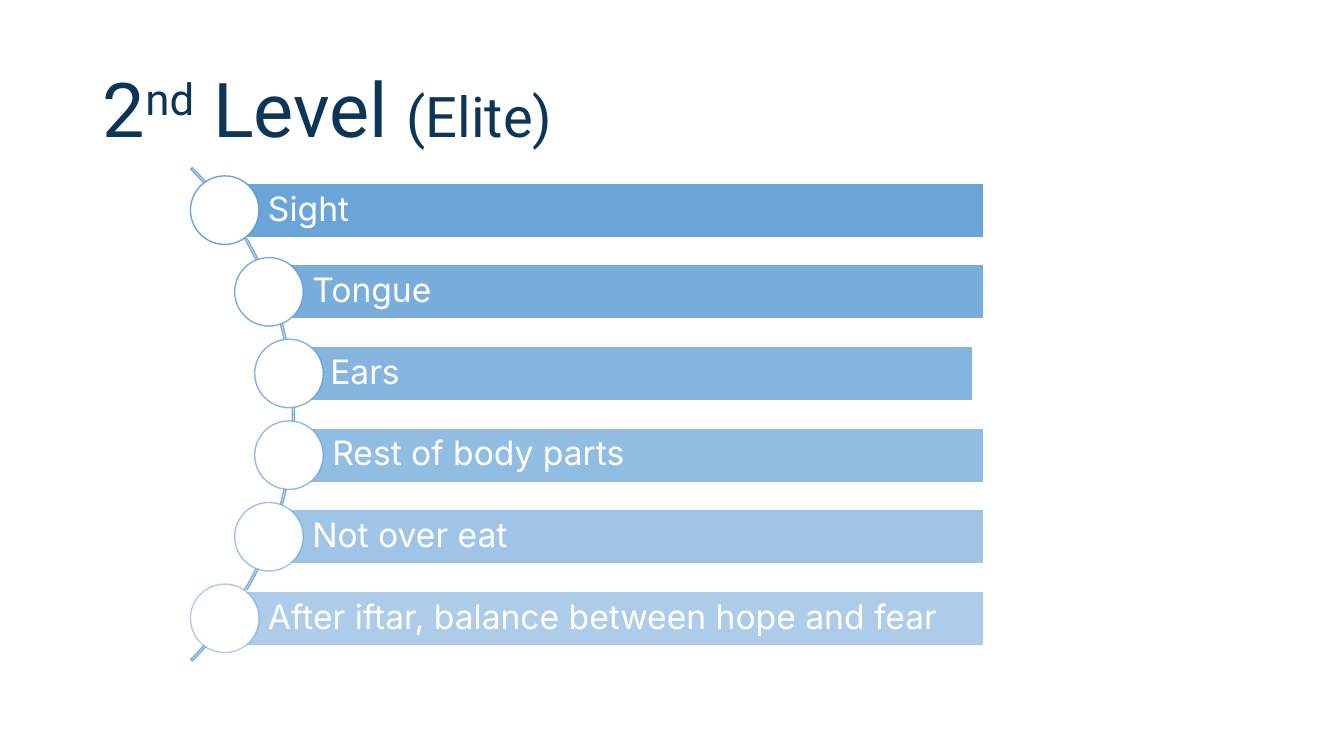
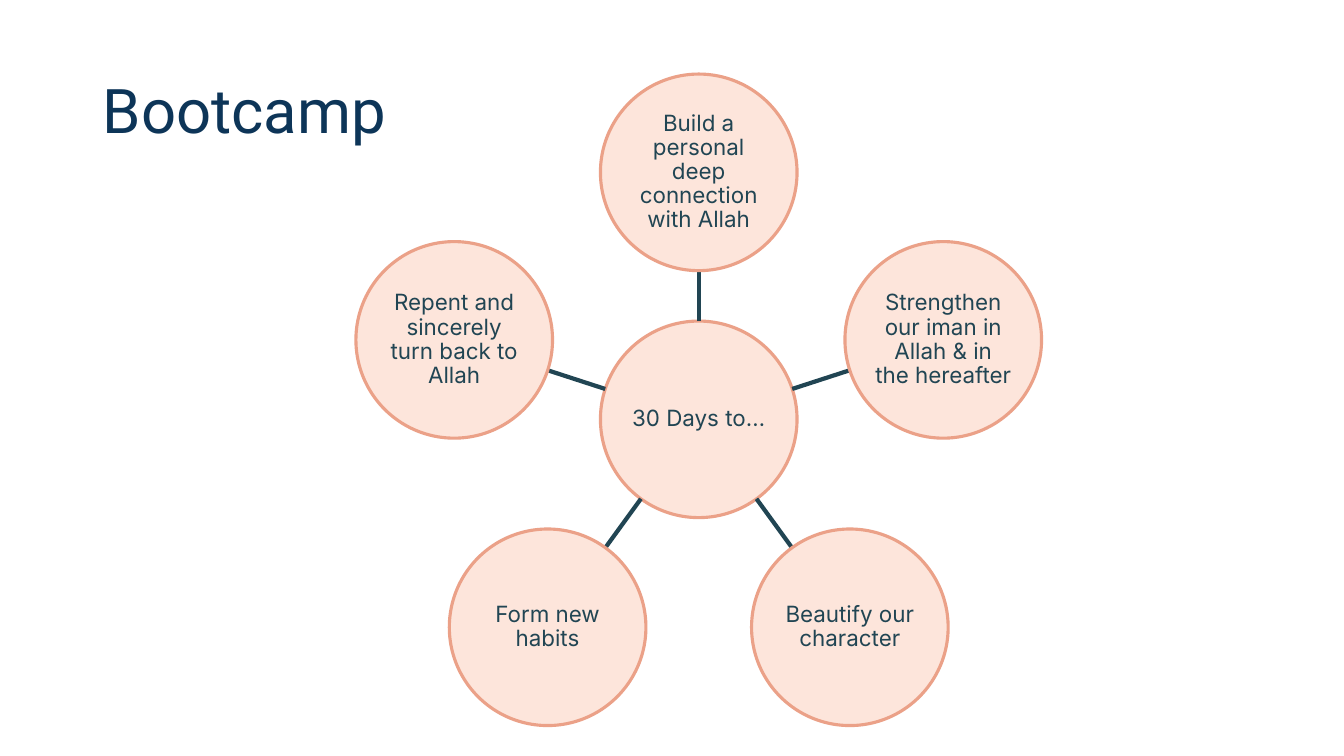
import math
from lxml import etree
from pptx import Presentation
from pptx import util as u
from pptx.dml import color
from pptx.enum import shapes, text
from pptx.oxml import ns

PX = 9144
NAVY, BLUE, WHITE = "0D3558", "5B9BD5", "FFFFFF"
ARC_LINE, PEACH, CORAL, TEAL = "7AA9DA", "FDE5DB", "EBA188", "214553"
TITLE_FONT, BODY_FONT = "Roboto", "Inter"
TITLE_BOX = (92, 40, 1150, 145)

LEVEL_TITLE = [("2", 54, 0), ("nd", 54, 30), (" Level ", 54, 0), ("(Elite)", 40, 0)]
LEVELS = [
    {"label": "Sight"},
    {"label": "Tongue"},
    {"label": "Ears", "shift": -11, "indent": 52},
    {"label": "Rest of body parts"},
    {"label": "Not over eat"},
    {"label": "After iftar, balance between hope and fear"},
]
ARC_X, ARC_Y, ARC_RADIUS, DOT_PATH = -54, 411, 346, 343
BAR_RIGHT, BAR_HEIGHT, BAR_PITCH, DOT = 976, 54, 81, 68
FIRST_ALPHA, ALPHA_STEP = 90, 8

BOOTCAMP_TITLE = [("Bootcamp", 44, 0)]
HUB = "30 Days to…"
GOALS = [
    ("Build a personal deep connection with Allah", 245),
    ("Strengthen our iman in Allah & in the hereafter", 255),
    ("Beautify our character", 255),
    ("Form new habits", 255),
    ("Repent and sincerely turn back to Allah", 255),
]
HUB_X, HUB_Y, CIRCLE = 693, 416, 195


def px(value):
    return u.Emu(round(value * PX))


def rgb(value):
    return color.RGBColor.from_string(value)


def set_alpha(fill, percent):
    tone = fill._xPr.find(ns.qn("a:solidFill"))[0]
    etree.SubElement(tone, ns.qn("a:alpha"), val=str(percent * 1000))


def add_text(para, words, size, font, tone, baseline=0):
    span = para.add_run()
    span.text = words
    span.font.size, span.font.name = u.Pt(size), font
    span.font.color.rgb = rgb(tone)
    if baseline:
        span._r.get_or_add_rPr().set("baseline", str(baseline * 1000))


def write(box, words, size, tone, align, insets):
    frame = box.text_frame
    frame.word_wrap = True
    frame.vertical_anchor = text.MSO_ANCHOR.MIDDLE
    (frame.margin_left, frame.margin_top,
     frame.margin_right, frame.margin_bottom) = map(px, insets)
    para = frame.paragraphs[0]
    para.alignment, para.line_spacing = align, 0.9
    add_text(para, words, size, BODY_FONT, tone)


def add_box(page, kind, place, fill, line, width, fill_alpha=100, line_alpha=100):
    box = page.shapes.add_shape(kind, *map(px, place))
    box.shadow.inherit = False
    if fill:
        box.fill.solid()
        box.fill.fore_color.rgb = rgb(fill)
        if fill_alpha < 100:
            set_alpha(box.fill, fill_alpha)
    else:
        box.fill.background()
    box.line.width = u.Pt(width)
    box.line.color.rgb = rgb(line)
    if line_alpha < 100:
        set_alpha(box.line.fill, line_alpha)
    return box


def add_circle(page, x, y, size, *style, **alphas):
    place = (x - size / 2, y - size / 2, size, size)
    return add_box(page, shapes.MSO_SHAPE.OVAL, place, *style, **alphas)


def add_page(deck, title_spans):
    page = deck.slides.add_slide(deck.slide_layouts.get_by_name("Title Only"))
    title = page.shapes.title
    title.left, title.top, title.width, title.height = map(px, TITLE_BOX)
    title.text_frame.auto_size = text.MSO_AUTO_SIZE.NONE
    title.text_frame.vertical_anchor = text.MSO_ANCHOR.MIDDLE
    para = title.text_frame.paragraphs[0]
    para.alignment, para.line_spacing = text.PP_ALIGN.LEFT, 0.9
    for words, size, baseline in title_spans:
        add_text(para, words, size, TITLE_FONT, NAVY, baseline)
    return page


def add_levels(page):
    place = (ARC_X - ARC_RADIUS, ARC_Y - ARC_RADIUS, 2 * ARC_RADIUS, 2 * ARC_RADIUS)
    arc = add_box(page, shapes.MSO_SHAPE.BLOCK_ARC, place, None, ARC_LINE, 1)
    for index, value in enumerate((189, 27, 0.003)):
        arc.adjustments[index] = value
    for index, level in enumerate(LEVELS):
        rise = (index - (len(LEVELS) - 1) / 2) * BAR_PITCH
        x, y = ARC_X + math.sqrt(DOT_PATH ** 2 - rise ** 2), ARC_Y + rise
        alpha = FIRST_ALPHA - index * ALPHA_STEP
        place = (x + level.get("shift", 0), y - BAR_HEIGHT / 2, BAR_RIGHT - x, BAR_HEIGHT)
        bar = add_box(page, shapes.MSO_SHAPE.RECTANGLE, place, BLUE, WHITE, 1,
                      fill_alpha=alpha)
        write(bar, level["label"], 24, WHITE, text.PP_ALIGN.LEFT,
              (level.get("indent", 43), 7, 7, 7))
        add_circle(page, x, y, DOT, WHITE, BLUE, 1, line_alpha=alpha)


def add_goal(page, words, x, y):
    circle = add_circle(page, x, y, CIRCLE, PEACH, CORAL, 2.25)
    write(circle, words, 16, TEAL, text.PP_ALIGN.CENTER, (1, 1, 1, 1))


def add_spoke(page, start, end):
    spoke = page.shapes.add_connector(shapes.MSO_CONNECTOR.STRAIGHT,
                                      *map(px, start + end))
    spoke.line.width = u.Pt(3)
    spoke.line.color.rgb = rgb(TEAL)
    etree.SubElement(spoke._element.spPr, ns.qn("a:effectLst"))


def add_wheel(page):
    add_goal(page, HUB, HUB_X, HUB_Y)
    for index, (words, distance) in enumerate(GOALS):
        angle = math.tau * index / len(GOALS) - math.pi / 2

        def along(reach):
            return HUB_X + reach * math.cos(angle), HUB_Y + reach * math.sin(angle)

        add_spoke(page, along(CIRCLE / 2), along(distance - CIRCLE / 2))
        add_goal(page, words, *along(distance))


def main():
    deck = Presentation()
    deck.slide_width, deck.slide_height = px(1333), px(750)
    add_levels(add_page(deck, LEVEL_TITLE))
    add_wheel(add_page(deck, BOOTCAMP_TITLE))
    deck.save("out.pptx")


if __name__ == "__main__":
    main()
